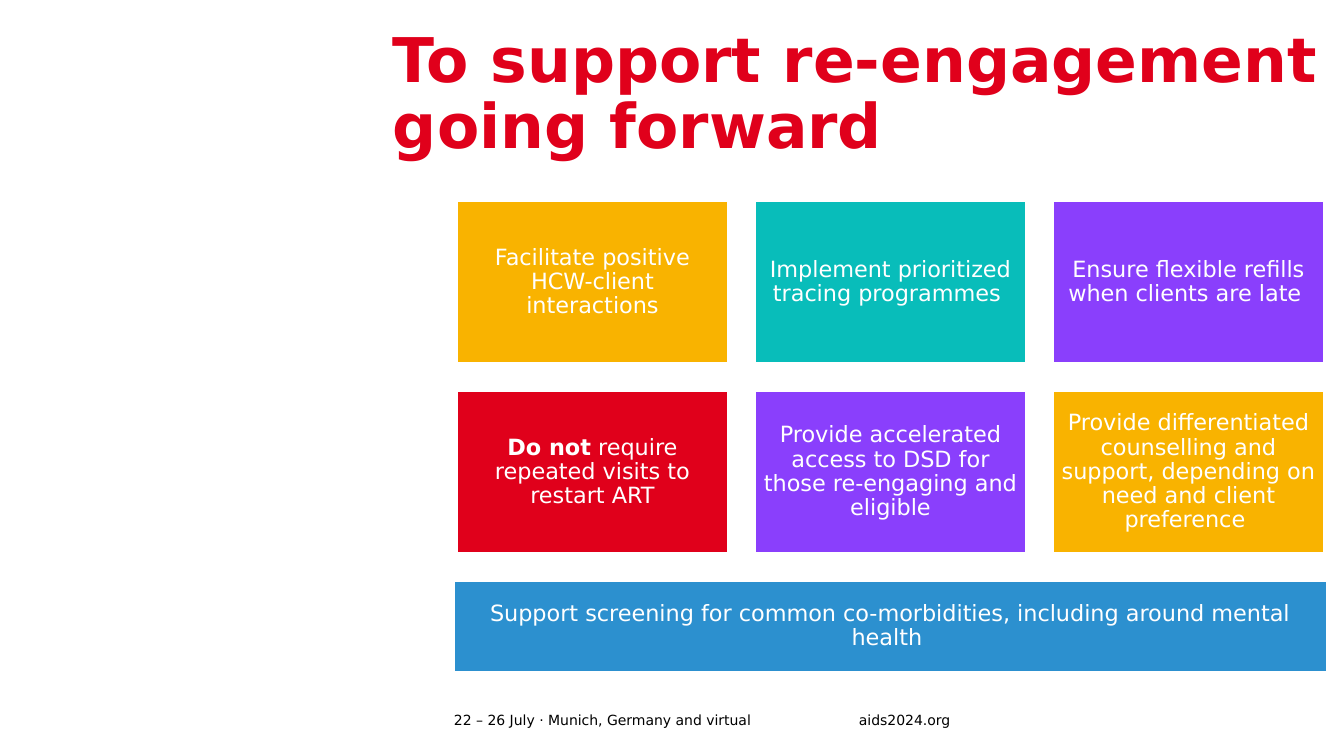
from pptx import Presentation
from pptx.dml.color import RGBColor
from pptx.enum.shapes import MSO_SHAPE
from pptx.enum.text import MSO_ANCHOR, PP_ALIGN
from pptx.util import Emu, Pt

FONT = "DejaVu Sans"
WHITE, BLACK, RED = "FFFFFF", "000000", "E0001B"
AMBER, TEAL, PURPLE, BLUE = "F9B300", "08BDBA", "8A3FFC", "2C90CF"


def px(length):
    return Emu(round(length * 914400 / 100.8))


def write(shape, runs, size, color, margin=0, spacing=1.0, align=PP_ALIGN.LEFT, anchor=MSO_ANCHOR.MIDDLE):
    frame = shape.text_frame
    frame_format = {"word_wrap": True, "vertical_anchor": anchor}
    for side in ("left", "top", "right", "bottom"):
        frame_format[f"margin_{side}"] = px(margin)
    for name, value in frame_format.items():
        setattr(frame, name, value)
    para = frame.paragraphs[0]
    para.alignment = align
    para.line_spacing = spacing
    for text, bold in runs:
        span = para.add_run()
        span.text = text
        for name, value in {"name": FONT, "size": Pt(size), "bold": bold}.items():
            setattr(span.font, name, value)
        span.font.color.rgb = RGBColor.from_string(color)


deck = Presentation()
deck.slide_width = px(1344)
deck.slide_height = px(756)
page = deck.slides.add_slide(deck.slide_layouts[6])

footers = [
    (454, 405, "22 – 26 July · Munich, Germany and virtual"),
    (859, 195, "aids2024.org"),
]
for left, width, text in footers:
    footer = page.shapes.add_textbox(px(left), px(708), px(width), px(24))
    write(footer, [(text, False)], 10, BLACK)

actions = [
    (AMBER, [("Facilitate positive HCW-client interactions", False)]),
    (TEAL, [("Implement prioritized tracing programmes ", False)]),
    (PURPLE, [("Ensure flexible refills when clients are late ", False)]),
    (RED, [("Do not", True), (" require repeated visits to restart ART", False)]),
    (PURPLE, [("Provide accelerated access to DSD for those re-engaging and eligible", False)]),
    (AMBER, [("Provide differentiated counselling and support, depending on need and client preference ", False)]),
]
cards = []
for index, (fill, runs) in enumerate(actions):
    row, column = divmod(index, 3)
    cards.append((457 + 298 * column, 201 + 190 * row, 271, 162, fill, runs))
screening = "Support screening for common co-morbidities, including around mental health "
cards.append((454, 581, 873, 91, BLUE, [(screening, False)]))

for left, top, width, height, fill, runs in cards:
    card = page.shapes.add_shape(MSO_SHAPE.RECTANGLE, px(left), px(top), px(width), px(height))
    card.shadow.inherit = False
    card.fill.solid()
    card.fill.fore_color.rgb = RGBColor.from_string(fill)
    card.line.color.rgb = RGBColor.from_string(WHITE)
    card.line.width = Pt(1)
    write(card, runs, 16, WHITE, margin=7, spacing=0.9, align=PP_ALIGN.CENTER)

title = page.shapes.add_textbox(px(393), px(29), px(964), px(135))
write(title, [("To support re-engagement going forward", True)], 44, RED, spacing=0.9, anchor=MSO_ANCHOR.TOP)

deck.save("out.pptx")
